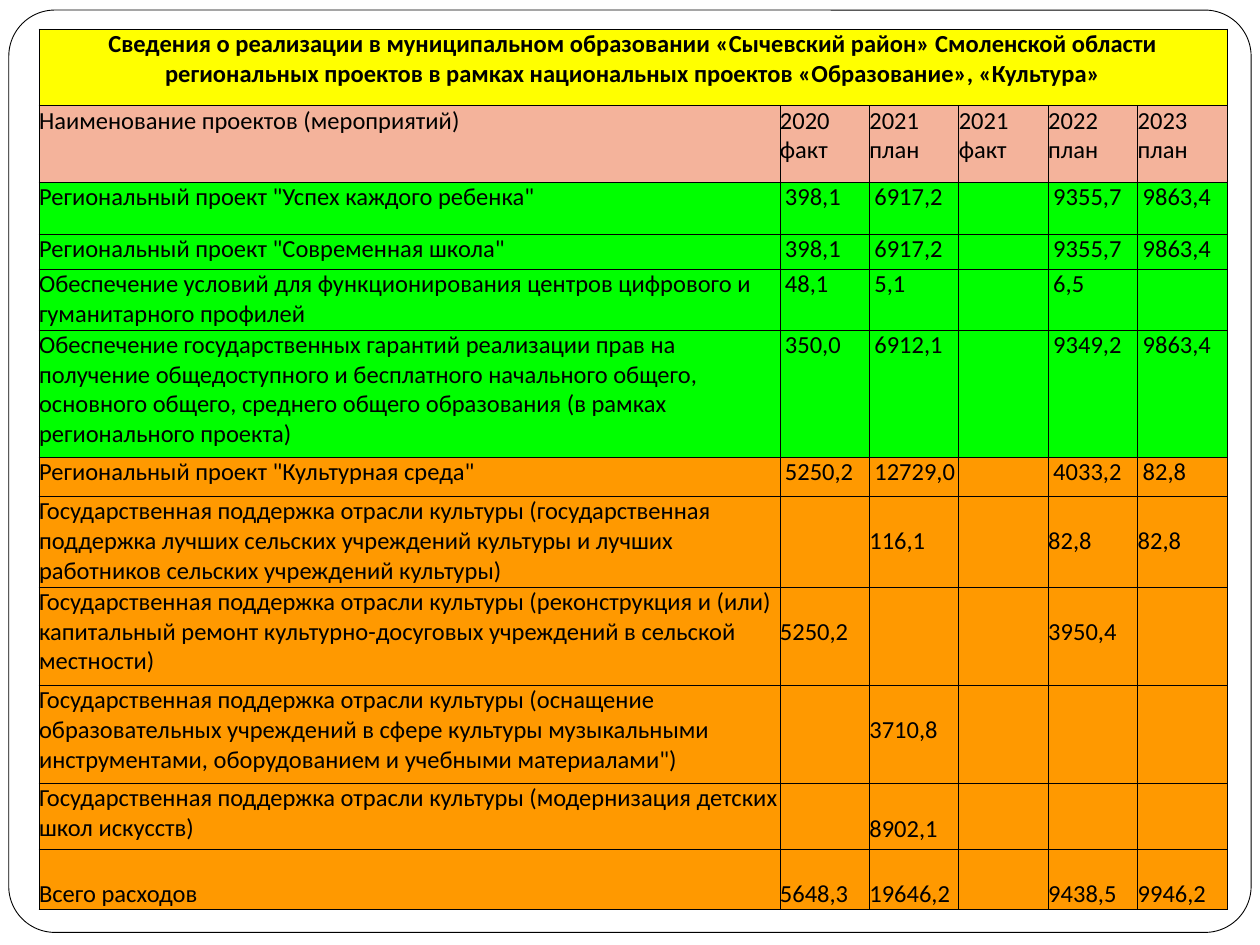
"""Builds the slide on regional projects within the national projects."""
from dataclasses import dataclass

from lxml import etree
from pptx import Presentation
from pptx.dml.color import RGBColor
from pptx.enum.shapes import MSO_SHAPE
from pptx.enum.text import PP_ALIGN
from pptx.oxml.ns import qn
from pptx.util import Inches, Pt

ROUNDED = MSO_SHAPE.ROUNDED_RECTANGLE
LEFT, CENTER = PP_ALIGN.LEFT, PP_ALIGN.CENTER


@dataclass(frozen=True)
class Theme:
    """Colours, font and sizes of the slide."""
    paper: str = "FFFFFF"
    ink: str = "000000"
    heading: str = "FFFF00"
    header: str = "F4B39B"
    education: str = "00FF00"
    culture: str = "FF9900"
    font: str = "Calibri"
    size: int = 14
    rule: float = 0.5
    indent: float = 0.04
    second_line: float = 0.24


HEADING = [
    "Сведения о реализации в муниципальном образовании «Сычевский район» Смоленской области",
    "региональных проектов в рамках национальных проектов «Образование», «Культура»",
]
HEADER = ["Наименование проектов (мероприятий)",
          "2020 факт", "2021 план", "2021 факт", "2022 план", "2023 план"]
EDUCATION = [
    ['Региональный проект "Успех каждого ребенка"', "398,1", "6917,2", "", "9355,7", "9863,4"],
    ['Региональный проект "Современная школа"', "398,1", "6917,2", "", "9355,7", "9863,4"],
    ["Обеспечение условий для функционирования центров цифрового и гуманитарного профилей",
     "48,1", "5,1", "", "6,5", ""],
    ["Обеспечение государственных гарантий реализации прав на получение общедоступного и "
     "бесплатного начального общего, основного общего, среднего общего образования "
     "(в рамках регионального проекта)", "350,0", "6912,1", "", "9349,2", "9863,4"],
]
CULTURE = [
    ['Региональный проект "Культурная среда"', "5250,2", "12729,0", "", "4033,2", "82,8"],
]
SUPPORT = [
    ["Государственная поддержка отрасли культуры (государственная поддержка лучших сельских "
     "учреждений культуры и лучших работников сельских учреждений культуры)",
     "", "116,1", "", "82,8", "82,8"],
    ["Государственная поддержка отрасли культуры (реконструкция и (или) капитальный ремонт "
     "культурно-досуговых учреждений в сельской местности)",
     "5250,2", "", "", "3950,4", ""],
    ["Государственная поддержка отрасли культуры (оснащение образовательных учреждений в сфере "
     "культуры музыкальными инструментами, оборудованием и учебными материалами\")",
     "", "3710,8", "", "", ""],
    ["Государственная поддержка отрасли культуры (модернизация детских школ искусств)",
     "", "8902,1", "", "", ""],
]
TOTAL = [["Всего расходов", "5648,3", "19646,2", "", "9438,5", "9946,2"]]
COLUMN_WIDTHS = [5.88] + [0.71] * 5
ROW_HEIGHTS = [0.61, 0.61, 0.41, 0.28, 0.48, 1.01, 0.31, 0.72, 0.78, 0.78, 0.52, 0.48]


class SlideBuilder:
    """Holds the theme and the current slide."""

    def __init__(self, theme, slide):
        self.theme = theme
        self.slide = slide

    def frame(self, left, top, width, height, corner):
        """Draws the rounded page frame."""
        border = self.slide.shapes.add_shape(
            ROUNDED, Inches(left), Inches(top), Inches(width), Inches(height))
        border.adjustments[0] = corner
        border.shadow.inherit = False
        border.fill.solid()
        border.fill.fore_color.rgb = RGBColor.from_string(self.theme.paper)
        border.line.color.rgb = RGBColor.from_string(self.theme.ink)
        border.line.width = Pt(self.theme.rule)

    def table(self, left, top, widths, heights):
        """Adds an empty table with the given column widths and row heights."""
        grid = self.slide.shapes.add_table(
            len(heights), len(widths), Inches(left), Inches(top),
            Inches(sum(widths)), Inches(sum(heights))).table
        for column, width in zip(grid.columns, widths):
            column.width = Inches(width)
        for row, height in zip(grid.rows, heights):
            row.height = Inches(height)
        return grid

    def borders(self, cell):
        """Outlines a cell on all four sides."""
        properties = cell._tc.get_or_add_tcPr()
        for side in ("a:lnL", "a:lnR", "a:lnT", "a:lnB"):
            line = etree.SubElement(properties, qn(side), w=str(Pt(self.theme.rule)))
            fill = etree.SubElement(line, qn("a:solidFill"))
            etree.SubElement(fill, qn("a:srgbClr"), val=self.theme.ink)

    def cell(self, cell, lines, fill, indent=0, drop=0, bold=False, align=LEFT):
        """Fills, outlines and writes one cell."""
        margins = {"margin_left": indent, "margin_top": drop,
                   "margin_right": 0, "margin_bottom": 0}
        for name, value in margins.items():
            setattr(cell, name, Inches(value))
        self.borders(cell)
        cell.fill.solid()
        cell.fill.fore_color.rgb = RGBColor.from_string(fill)
        cell.text = "\n".join(lines)
        style = {"name": self.theme.font, "size": Pt(self.theme.size), "bold": bold}
        for paragraph in cell.text_frame.paragraphs:
            paragraph.alignment = align
            paragraph.space_before = Pt(0)
            for run in paragraph.runs:
                for name, value in style.items():
                    setattr(run.font, name, value)
                run.font.color.rgb = RGBColor.from_string(self.theme.ink)
            if not paragraph.runs:
                etree.SubElement(paragraph._p, qn("a:endParaRPr"),
                                 sz=str(self.theme.size * 100))


def main():
    """Builds and saves the presentation."""
    theme = Theme()
    deck = Presentation()
    deck.slide_width, deck.slide_height = Inches(10), Inches(7.5)
    builder = SlideBuilder(theme, deck.slides.add_slide(deck.slide_layouts[6]))
    builder.frame(0.07, 0.08, 9.86, 7.32, 0.05)
    grid = builder.table(0.31, 0.23, COLUMN_WIDTHS, ROW_HEIGHTS)

    for cell in grid.rows[0].cells:
        builder.cell(cell, [], theme.heading)
    grid.cell(0, 0).merge(grid.cell(0, len(COLUMN_WIDTHS) - 1))
    grid.cell(0, 0)._tc.get_or_add_tcPr().clear()
    builder.cell(grid.cell(0, 0), HEADING, theme.heading, bold=True, align=CENTER)

    indented = {"indent": theme.indent}
    dropped = {"drop": theme.second_line}
    sections = [
        ([HEADER], theme.header, {}, {}),
        (EDUCATION, theme.education, {}, indented),
        (CULTURE, theme.culture, {}, indented),
        (SUPPORT, theme.culture, {}, dropped),
        (TOTAL, theme.culture, dropped, dropped),
    ]
    projects = [(project, fill, name_format, value_format)
                for section, fill, name_format, value_format in sections
                for project in section]
    for row, (project, fill, name_format, value_format) in enumerate(projects, start=1):
        name, *values = project
        builder.cell(grid.cell(row, 0), [name], fill, **name_format)
        for column, value in enumerate(values, start=1):
            builder.cell(grid.cell(row, column), [value], fill, **value_format)

    deck.save("out.pptx")


if __name__ == "__main__":
    main()
